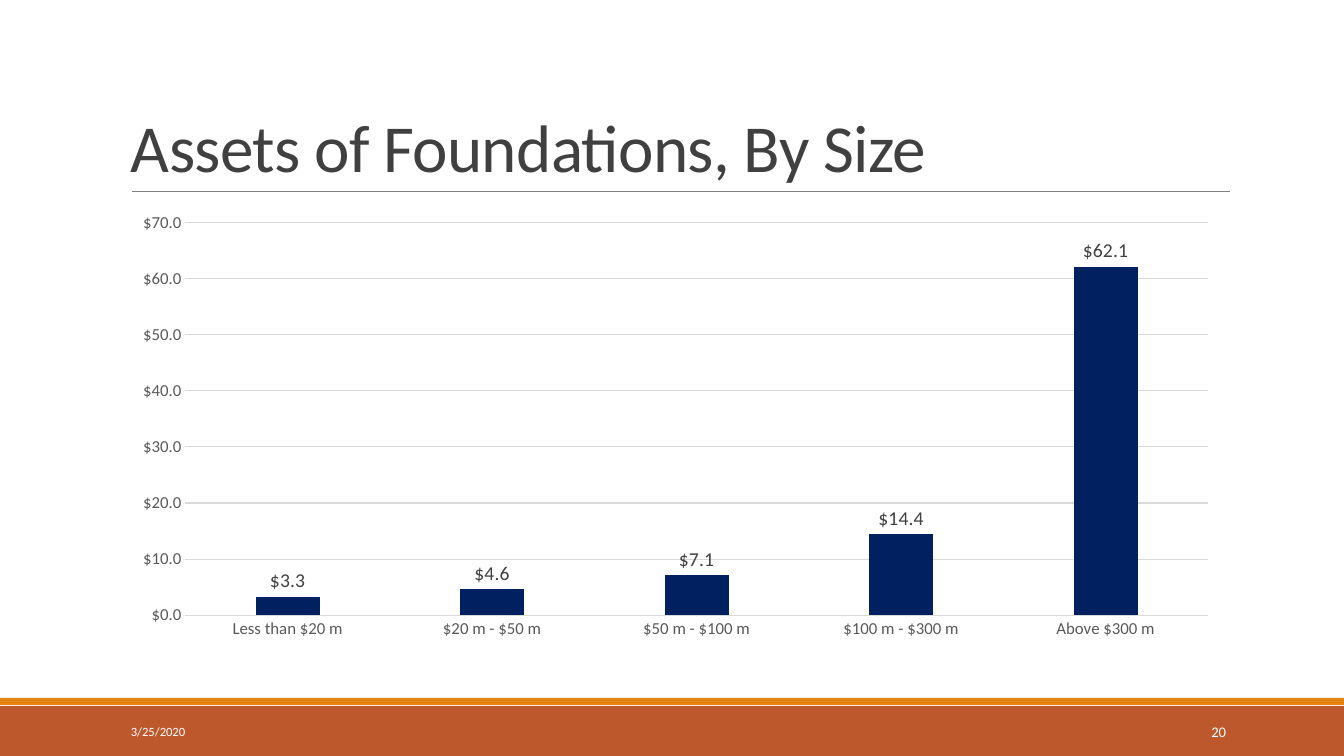
from dataclasses import dataclass

from pptx import Presentation
from pptx.chart.data import CategoryChartData
from pptx.dml.color import RGBColor
from pptx.enum.chart import XL_CHART_TYPE as ChartType
from pptx.enum.chart import XL_LABEL_POSITION as LabelPosition
from pptx.enum.chart import XL_TICK_MARK as TickMark
from pptx.enum.shapes import MSO_CONNECTOR as Connector
from pptx.enum.shapes import MSO_SHAPE as Shape
from pptx.enum.text import MSO_ANCHOR as Anchor
from pptx.enum.text import PP_ALIGN as Align
from pptx.oxml.ns import qn
from pptx.util import Emu, Pt

SLIDE_WIDTH, SLIDE_HEIGHT = 1344, 756
EMU_PER_PX = 914400 / 100.8
DOLLARS = '"$"#,##0.0'
ASSETS_BY_SIZE = {
    "Less than $20 m": 3.3,
    "$20 m - $50 m": 4.6,
    "$50 m - $100 m": 7.1,
    "$100 m - $300 m": 14.4,
    "Above $300 m": 62.1,
}


@dataclass(frozen=True)
class Theme:
    font: str = "Calibri"
    title: str = "404040"
    axis: str = "595959"
    grid: str = "D9D9D9"
    rule: str = "808080"
    bar: str = "002060"
    footer: str = "BD582C"
    accent: str = "E48312"
    white: str = "FFFFFF"
    title_size: float = 48
    label_size: float = 14
    axis_size: float = 12
    number_size: float = 10.5
    date_size: float = 9


def px(*lengths):
    return [Emu(round(length * EMU_PER_PX)) for length in lengths]


class SlideBuilder:
    def __init__(self, slide, theme):
        self.slide = slide
        self.theme = theme

    def style_font(self, font, size, color):
        font.name = self.theme.font
        font.size = Pt(size)
        font.color.rgb = RGBColor.from_string(color)

    def style_line(self, line, color, width):
        line.color.rgb = RGBColor.from_string(color)
        line.width = Pt(width)

    def band(self, top, height, color):
        """Full-width bar without an outline."""
        shape = self.slide.shapes.add_shape(Shape.RECTANGLE, *px(0, top, SLIDE_WIDTH, height))
        shape.shadow.inherit = False
        shape.fill.solid()
        shape.fill.fore_color.rgb = RGBColor.from_string(color)
        shape.line.fill.background()

    def rule(self, left, right, y):
        connector = self.slide.shapes.add_connector(Connector.STRAIGHT, *px(left, y, right, y))
        self.style_line(connector.line, self.theme.rule, 0.5)
        properties = connector._element.spPr
        properties.append(properties.makeelement(qn("a:effectLst"), {}))

    def text(self, content, box, size, color, anchor=Anchor.MIDDLE, align=Align.LEFT,
             line_spacing=None, tracking=None):
        """Single-run text box; tracking is in hundredths of a point."""
        frame = self.slide.shapes.add_textbox(*px(*box)).text_frame
        frame.word_wrap = True
        frame.vertical_anchor = anchor
        paragraph = frame.paragraphs[0]
        paragraph.alignment = align
        paragraph.line_spacing = line_spacing
        run = paragraph.add_run()
        run.text = content
        self.style_font(run.font, size, color)
        if tracking is not None:
            run._r.get_or_add_rPr().set("spc", str(tracking))

    def column_chart(self, values, box):
        theme = self.theme
        data = CategoryChartData(number_format=DOLLARS)
        data.categories = values.keys()
        data.add_series("Series 1", values.values())
        chart = self.slide.shapes.add_chart(ChartType.COLUMN_CLUSTERED, *px(*box), data).chart
        chart.has_title = False
        chart.has_legend = False
        self.style_font(chart.font, theme.axis_size, theme.axis)

        for axis in (chart.category_axis, chart.value_axis):
            axis.major_tick_mark = axis.minor_tick_mark = TickMark.NONE
            self.style_font(axis.tick_labels.font, theme.axis_size, theme.axis)
        self.style_line(chart.category_axis.format.line, theme.grid, 0.75)

        value_axis = chart.value_axis
        value_axis.minimum_scale, value_axis.maximum_scale, value_axis.major_unit = 0, 70, 10
        value_axis.format.line.fill.background()
        self.style_line(value_axis.major_gridlines.format.line, theme.grid, 0.75)
        value_axis.tick_labels.number_format = DOLLARS
        value_axis.tick_labels.number_format_is_linked = False

        plot = chart.plots[0]
        plot.vary_by_categories = False
        plot.gap_width, plot.overlap = 219, -27
        series = plot.series[0]
        series.invert_if_negative = False
        series.format.fill.solid()
        series.format.fill.fore_color.rgb = RGBColor.from_string(theme.bar)

        labels = series.data_labels
        labels.show_value = True
        labels.position = LabelPosition.OUTSIDE_END
        labels.number_format = DOLLARS
        labels.number_format_is_linked = False
        self.style_font(labels.font, theme.label_size, theme.title)


def main():
    presentation = Presentation()
    presentation.slide_width, presentation.slide_height = px(SLIDE_WIDTH, SLIDE_HEIGHT)
    theme = Theme()
    builder = SlideBuilder(presentation.slides.add_slide(presentation.slide_layouts[6]), theme)

    builder.band(706, 50, theme.footer)
    builder.band(698, 7, theme.accent)
    builder.rule(132, 1230, 191)
    builder.text("Assets of Foundations, By Size", (121, 31, 1109, 160), theme.title_size,
                 theme.title, anchor=Anchor.BOTTOM, line_spacing=0.85, tracking=-50)
    builder.column_chart(ASSETS_BY_SIZE, (121, 204, 1109, 444))
    builder.text("3/25/2020", (121, 712, 272, 40), theme.date_size, theme.white)
    builder.text("20", (1092, 712, 144, 40), theme.number_size, theme.white, align=Align.RIGHT)
    presentation.save("out.pptx")


if __name__ == "__main__":
    main()
